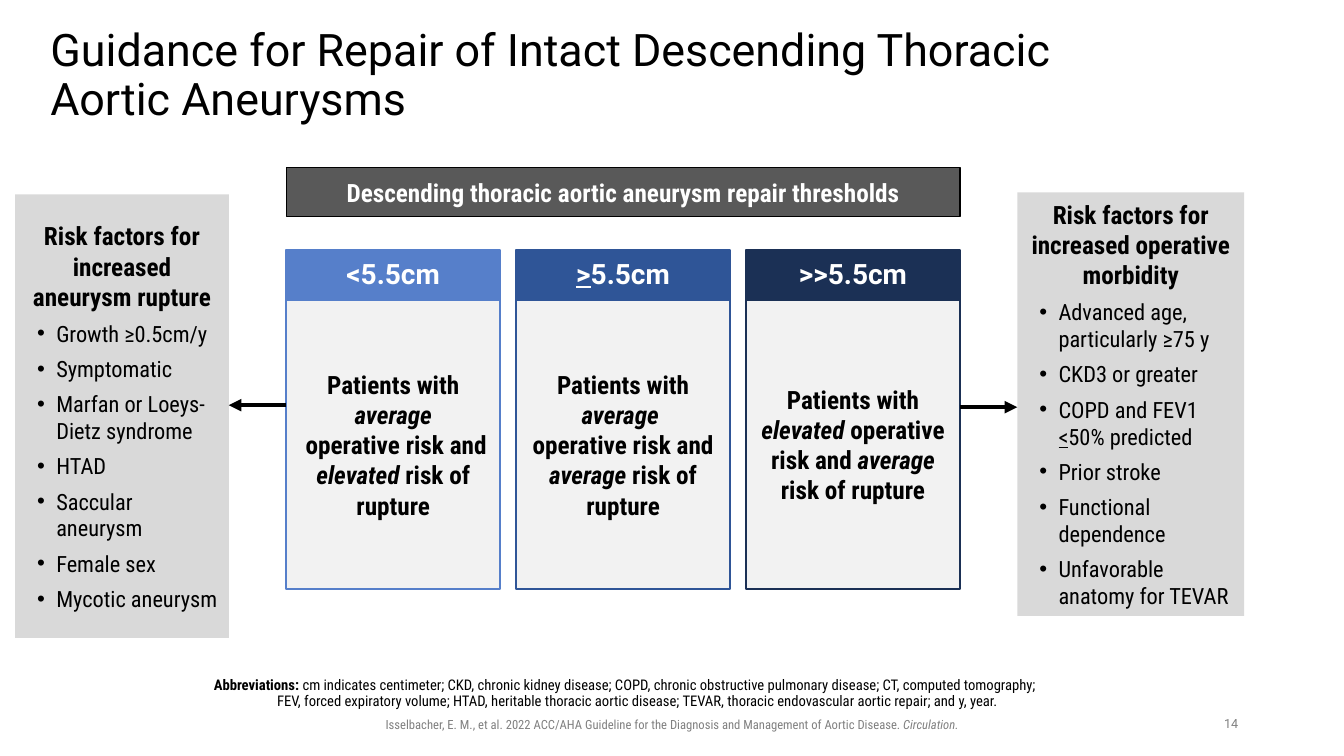
from lxml import etree
from pptx import Presentation
from pptx.dml.color import RGBColor
from pptx.enum.shapes import MSO_CONNECTOR, MSO_SHAPE
from pptx.enum.text import MSO_ANCHOR, PP_ALIGN
from pptx.oxml.ns import qn
from pptx.util import Pt

PX = 9144  # EMU per px, 100 px to the inch
RECT = MSO_SHAPE.RECTANGLE
STRAIGHT = MSO_CONNECTOR.STRAIGHT
MIDDLE, TOP = MSO_ANCHOR.MIDDLE, MSO_ANCHOR.TOP
CENTER, LEFT = PP_ALIGN.CENTER, PP_ALIGN.LEFT
SANS, CONDENSED = "Roboto", "Roboto Condensed"
BLACK, WHITE, GREY = "000000", "FFFFFF", "808080"
INSET = (10, 5, 10, 5)


def rgb(hex_color):
    return RGBColor.from_string(hex_color)


def write(frame, *paragraphs, size=18, font=CONDENSED, color=BLACK, style="", align=CENTER,
          anchor=MIDDLE, inset=INSET, line_spacing=None, space_before=0, hang=None,
          bullet=None, append=False):
    """Each paragraph is a string or a list of (text, style); styles are letters of "biu"."""
    frame.word_wrap = True
    frame.vertical_anchor = anchor
    (frame.margin_left, frame.margin_top,
     frame.margin_right, frame.margin_bottom) = [side * PX for side in inset]
    for index, runs in enumerate(paragraphs):
        paragraph = frame.add_paragraph() if append or index else frame.paragraphs[0]
        paragraph.alignment = align
        if line_spacing:
            paragraph.line_spacing = line_spacing
        if space_before:
            paragraph.space_before = Pt(space_before)
        properties = paragraph._p.get_or_add_pPr()
        if hang:
            margin, indent = hang
            properties.set("marL", str(margin * PX))
            properties.set("indent", str(indent * PX))
        if bullet:
            etree.SubElement(properties, qn("a:buFont"), typeface="Arial")
            etree.SubElement(properties, qn("a:buChar"), char=bullet)
        for text, run_style in [(runs, style)] if isinstance(runs, str) else runs:
            for line, part in enumerate(text.split("\n")):
                if line:
                    paragraph.add_line_break()
                if not part:
                    continue
                run = paragraph.add_run()
                run.text = part
                run.font.name, run.font.size = font, Pt(size)
                run.font.color.rgb = rgb(color)
                run.font.bold = "b" in run_style
                run.font.italic = "i" in run_style
                run.font.underline = "u" in run_style


def add_box(slide, box, fill, line=None, weight=1.5):
    shape = slide.shapes.add_shape(RECT, *[length * PX for length in box])
    shape.shadow.inherit = False
    shape.fill.solid()
    shape.fill.fore_color.rgb = rgb(fill)
    if line:
        shape.line.color.rgb = rgb(line)
        shape.line.width = Pt(weight)
    else:
        shape.line.fill.background()
    return shape


def add_note(slide, box, *paragraphs, **text_format):
    note = slide.shapes.add_textbox(*[length * PX for length in box])
    write(note.text_frame, *paragraphs, anchor=TOP, **text_format)


def add_title(slide, box, text):
    title = slide.shapes.title
    title.left, title.top, title.width, title.height = [length * PX for length in box]
    write(title.text_frame, text, size=32, font=SANS, align=LEFT,
          inset=(0, 0, 0, 0), line_spacing=0.9)


def add_threshold(slide, box, color, size_limit, patients):
    left, top, width, height = box
    header_height = 50
    header = add_box(slide, (left, top, width, header_height), color, color)
    write(header.text_frame, size_limit, size=20, font=SANS, color=WHITE, style="b",
          inset=(0, 0, 0, 0), line_spacing=0.9)
    body = add_box(slide, (left, top + header_height, width, height - header_height),
                   "F2F2F2", color)
    write(body.text_frame, patients)


def add_thresholds(slide, box):
    left, top, width, height = box
    banner = add_box(slide, (left, top, width, 49), "595959", BLACK, weight=1)
    write(banner.text_frame, "Descending thoracic aortic aneurysm repair thresholds",
          color=WHITE, style="b")
    column_width, columns_top = 212, 82
    pitch = (width - column_width) // (len(THRESHOLDS) - 1)
    for index, threshold in enumerate(THRESHOLDS):
        add_threshold(slide, (left + index * pitch, top + columns_top, column_width,
                              height - columns_top), *threshold)


def add_risk_factors(slide, box, heading, factors):
    panel = add_box(slide, box, "D9D9D9")
    write(panel.text_frame, heading, style="b")
    write(panel.text_frame, *factors, size=16, align=LEFT, space_before=6,
          hang=(31, -19), bullet="•", append=True)


def add_arrow(slide, start, end, y):
    arrow = slide.shapes.add_connector(STRAIGHT, start * PX, y * PX, end * PX, y * PX)
    arrow.line.color.rgb = rgb(BLACK)
    arrow.line.width = Pt(3)
    etree.SubElement(arrow.line._get_or_add_ln(), qn("a:tailEnd"), type="triangle")
    etree.SubElement(arrow._element.spPr, qn("a:effectLst"))


# Content
THRESHOLDS = [
    ("567FCA", "<5.5cm",
     [("Patients with ", "b"), ("average\n", "bi"), (" operative risk and ", "b"),
      ("elevated", "bi"), (" risk of rupture", "b")]),
    ("2F5597", [(">", "bu"), ("5.5cm", "b")],
     [("Patients with ", "b"), ("average \n", "bi"), ("operative risk and ", "b"),
      ("average", "bi"), (" risk of rupture", "b")]),
    ("1B3055", ">>5.5cm",
     [("Patients with ", "b"), ("elevated", "bi"), (" operative risk and ", "b"),
      ("average", "bi"), (" risk of rupture", "b")]),
]
RUPTURE_FACTORS = ["Growth ≥0.5cm/y", "Symptomatic", "Marfan or Loeys-Dietz syndrome", "HTAD",
                   "Saccular aneurysm", "Female sex", "Mycotic aneurysm"]
MORBIDITY_FACTORS = ["Advanced age, particularly ≥75 y", "CKD3 or greater",
                     [("COPD and FEV1 ", ""), ("<", "u"), ("50% predicted", "")],
                     "Prior stroke", "Functional dependence", "Unfavorable anatomy for TEVAR"]
ABBREVIATIONS = (
    "cm indicates centimeter; CKD, chronic kidney disease; COPD, chronic obstructive pulmonary "
    "disease; CT, computed tomography; FEV, forced expiratory volume; HTAD, heritable thoracic "
    "aortic disease; TEVAR, thoracic endovascular aortic repair; and y, year.")
CITATION = ("Isselbacher, E. M., et al. 2022 ACC/AHA Guideline for the Diagnosis and Management "
            "of Aortic Disease. ")


def main():
    deck = Presentation()
    deck.slide_width, deck.slide_height = 1333 * PX, 750 * PX
    slide = deck.slides.add_slide(deck.slide_layouts[5])

    add_title(slide, (50, 40, 1064, 72),
              "Guidance for Repair of Intact Descending Thoracic Aortic Aneurysms")

    # Thresholds between the two risk panels
    add_thresholds(slide, (284, 166, 668, 418))
    add_risk_factors(slide, (15, 193, 212, 440),
                     "Risk factors for increased aneurysm rupture", RUPTURE_FACTORS)
    add_risk_factors(slide, (1009, 191, 225, 420),
                     "Risk factors for increased operative morbidity", MORBIDITY_FACTORS)
    add_arrow(slide, 284, 227, 402)
    add_arrow(slide, 952, 1009, 404)

    # Footer
    add_note(slide, (200, 668, 850, 40), [("Abbreviations: ", "b"), (ABBREVIATIONS, "")],
             size=10.5, inset=(0, 5, 10, 5), line_spacing=0.9, hang=(25, -25))
    add_note(slide, (181, 706, 971, 25), [(CITATION, ""), ("Circulation.", "i")],
             size=9, color=GREY)
    add_note(slide, (1200, 705, 42, 26), "14", size=9, font=SANS, color=GREY)

    deck.save("out.pptx")


if __name__ == "__main__":
    main()
